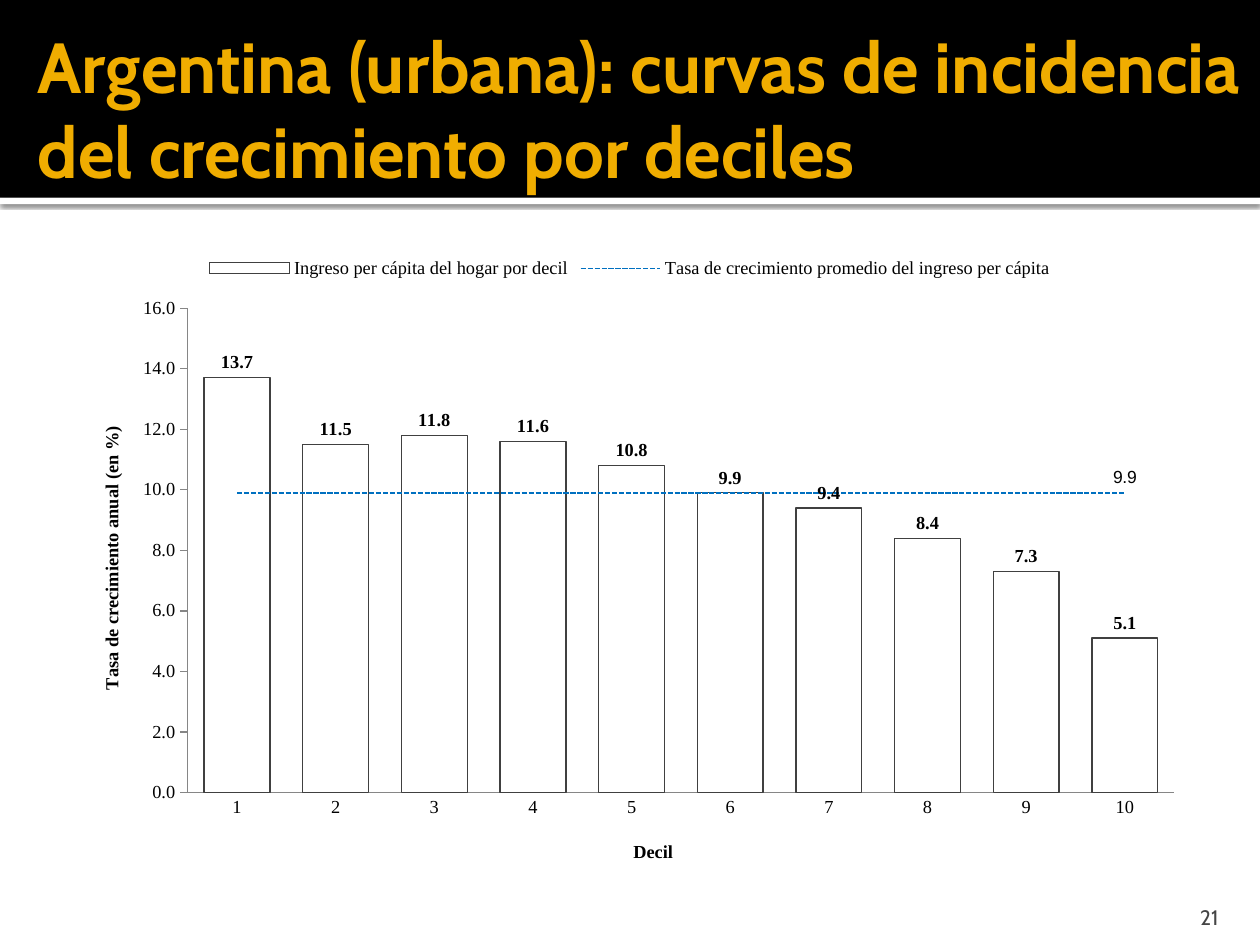
from dataclasses import dataclass

from lxml.etree import SubElement
from pptx import Presentation
from pptx.chart.data import CategoryChartData
from pptx.dml.color import RGBColor
from pptx.enum.chart import XL_CHART_TYPE as ChartType
from pptx.enum.chart import XL_LABEL_POSITION as LabelPos
from pptx.enum.chart import XL_LEGEND_POSITION as LegendPos
from pptx.enum.chart import XL_MARKER_STYLE as Marker
from pptx.enum.chart import XL_TICK_MARK as Tick
from pptx.enum.dml import MSO_LINE_DASH_STYLE as Dash
from pptx.enum.shapes import MSO_SHAPE as Shape
from pptx.enum.text import MSO_ANCHOR as Anchor
from pptx.enum.text import PP_ALIGN as Align
from pptx.oxml import parse_xml
from pptx.oxml.ns import nsdecls, qn
from pptx.util import Inches, Pt

COLS, ROWS = 100, 75  # grid of the slide


@dataclass(frozen=True)
class Theme:
    black: str = "000000"
    white: str = "FFFFFF"
    gold: str = "F0AD00"
    gray: str = "454545"
    outline: str = "404040"
    axis: str = "868686"
    blue: str = "0070C0"
    head_font: str = "Cabin"
    chart_font: str = "Times New Roman"
    label_font: str = "Arial"
    title_size: float = 40.5
    number_size: float = 12
    chart_size: float = 10.5
    label_size: float = 10


@dataclass(frozen=True)
class Box:
    """Left, top, width and height in grid columns and rows."""
    col: float
    row: float
    cols: float
    rows: float


@dataclass(frozen=True)
class Band:
    box: Box
    color: str
    shadow: bool = False


@dataclass(frozen=True)
class Label:
    text: str
    box: Box
    size: float
    color: str
    insets: tuple
    anchor: Anchor
    align: Align = Align.LEFT
    bold: bool = False


T = Theme()
BANDS = [
    Band(Box(0, 15.7, 100, 0.5), T.white, shadow=True),
    Band(Box(0, 0, 100, 15.7), T.black),
]
LABELS = [
    Label("Argentina (urbana): curvas de incidencia del crecimiento por deciles",
          Box(2, 1.7, 98, 13.7), T.title_size, T.gold,
          (0.1, 0.05, 0.05, 0.05), Anchor.MIDDLE, bold=True),
    Label("21", Box(89.7, 70.8, 8, 3), T.number_size, T.gray,
          (0.1, 0.05, 0.1, 0), Anchor.BOTTOM, Align.RIGHT),
]
CHART_BOX = Box(5, 19.4, 90, 50.6)
INCOME = [13.7, 11.5, 11.8, 11.6, 10.8, 9.9, 9.4, 8.4, 7.3, 5.1]
MEAN_GROWTH = 9.9


def rgb(color: str) -> RGBColor:
    return RGBColor.from_string(color)


def place(prs, box: Box) -> tuple:
    w, h = prs.slide_width, prs.slide_height
    return (int(w * box.col / COLS), int(h * box.row / ROWS),
            int(w * box.cols / COLS), int(h * box.rows / ROWS))


def style_font(font, name: str, size: float, color: str, bold: bool = False) -> None:
    font.name, font.size, font.bold = name, Pt(size), bold
    font.color.rgb = rgb(color)


def style_line(line, color: str, width: float = 0.75) -> None:
    line.color.rgb = rgb(color)
    line.width = Pt(width)


def add_band(prs, s, band: Band) -> None:
    sp = s.shapes.add_shape(Shape.RECTANGLE, *place(prs, band.box))
    sp.shadow.inherit = False
    sp.fill.solid()
    sp.fill.fore_color.rgb = rgb(band.color)
    sp.line.fill.background()
    if band.shadow:
        effects = sp.element.spPr.find(qn("a:effectLst"))
        outer = SubElement(effects, qn("a:outerShdw"), blurRad=str(Pt(2.5)),
                           dist=str(Pt(0.8)), dir="5400000")
        clr = SubElement(outer, qn("a:srgbClr"), val=T.black)
        SubElement(clr, qn("a:alpha"), val="60000")


def add_label(prs, s, label: Label) -> None:
    tf = s.shapes.add_textbox(*place(prs, label.box)).text_frame
    tf.word_wrap = True
    tf.vertical_anchor = label.anchor
    (tf.margin_left, tf.margin_top,
     tf.margin_right, tf.margin_bottom) = map(Inches, label.insets)
    p = tf.paragraphs[0]
    p.text, p.alignment = label.text, label.align
    style_font(p.runs[0].font, T.head_font, label.size, label.color, label.bold)


def set_layout(element, inner: bool = False, **shares: float) -> None:
    """Fix a chart part at shares (x, y, w, h) of the chart's size."""
    for old in element.findall(qn("c:layout")):
        element.remove(old)
    layout = parse_xml(f'<c:layout {nsdecls("c")}><c:manualLayout/></c:layout>')
    element.insert(0 if element.find(qn("c:tx")) is None else 1, layout)
    manual = layout[0]
    if inner:
        SubElement(manual, qn("c:layoutTarget"), val="inner")
    for side in "xy":
        SubElement(manual, qn(f"c:{side}Mode"), val="edge")
    for side, share in shares.items():
        SubElement(manual, qn(f"c:{side}"), val=str(share))


def move_last_series_to_line(chart) -> None:
    bars = chart.plots[0]._element
    line = parse_xml(f'<c:lineChart {nsdecls("c")}><c:grouping val="standard"/>'
                     '<c:varyColors val="0"/></c:lineChart>')
    ser = bars.findall(qn("c:ser"))[-1]
    for flag in ser.findall(qn("c:invertIfNegative")):
        ser.remove(flag)
    line.append(ser)
    SubElement(line, qn("c:marker"), val="1")
    for axis in bars.findall(qn("c:axId")):
        SubElement(line, qn("c:axId"), val=axis.get("val"))
    bars.addnext(line)


def style_axis(axis, title: str, tick: Tick, x: float, y: float) -> None:
    axis.has_major_gridlines = False
    axis.major_tick_mark, axis.minor_tick_mark = tick, Tick.NONE
    style_line(axis.format.line, T.axis)
    p = axis.axis_title.text_frame.paragraphs[0]
    p.text = title
    style_font(p.runs[0].font, T.chart_font, T.chart_size, T.black, True)
    set_layout(axis.axis_title._element, x=x, y=y)


def add_growth_chart(prs, s) -> None:
    data = CategoryChartData(number_format="0.0")
    data.categories = [str(decile) for decile in range(1, len(INCOME) + 1)]
    data.add_series("Ingreso per cápita del hogar por decil", INCOME)
    data.add_series("Tasa de crecimiento promedio del ingreso per cápita",
                    [MEAN_GROWTH] * len(INCOME))
    chart = s.shapes.add_chart(ChartType.COLUMN_CLUSTERED,
                               *place(prs, CHART_BOX), data).chart
    chart.has_title = False
    style_font(chart.font, T.chart_font, T.chart_size, T.black)
    move_last_series_to_line(chart)
    bars, line = chart.plots

    # Columns with their values
    bars.gap_width, bars.vary_by_categories = 50, False
    income = bars.series[0]
    income.format.fill.solid()
    income.format.fill.fore_color.rgb = rgb(T.white)
    style_line(income.format.line, T.outline)
    labels = income.data_labels
    labels.show_value, labels.position = True, LabelPos.OUTSIDE_END
    labels.number_format, labels.number_format_is_linked = "#,##0.0", False
    style_font(labels.font, T.chart_font, T.chart_size, T.black, True)

    # Dashed mean, labelled at its last point
    mean = line.series[0]
    mean.smooth, mean.marker.style = False, Marker.NONE
    style_line(mean.format.line, T.blue, 1)
    mean.format.line.dash_style = Dash.SQUARE_DOT
    last = mean.points[len(INCOME) - 1].data_label
    style_font(last.font, T.label_font, T.label_size, T.black)
    last.position = LabelPos.ABOVE

    # Axes, legend and plot area
    style_axis(chart.category_axis, "Decil", Tick.NONE, 0.5, 0.93)
    value_axis = chart.value_axis
    style_axis(value_axis, "Tasa de crecimiento anual (en %)", Tick.OUTSIDE, 0.03, 0.28)
    value_axis.minimum_scale, value_axis.maximum_scale = 0, 16
    value_axis.major_unit = 2
    value_axis.tick_labels.number_format = "#,##0.0"
    value_axis.tick_labels.number_format_is_linked = False
    chart.has_legend = True
    chart.legend.position, chart.legend.include_in_layout = LegendPos.TOP, False
    plot_area = chart._chartSpace.chart.plotArea
    set_layout(plot_area, inner=True, x=0.11, y=0.1, w=0.87, h=0.76)


def main() -> None:
    prs = Presentation()
    prs.slide_width, prs.slide_height = Inches(10), Inches(7.5)
    s = prs.slides.add_slide(prs.slide_layouts[6])
    for band in BANDS:
        add_band(prs, s, band)
    for label in LABELS:
        add_label(prs, s, label)
    add_growth_chart(prs, s)
    prs.save("out.pptx")


if __name__ == "__main__":
    main()
